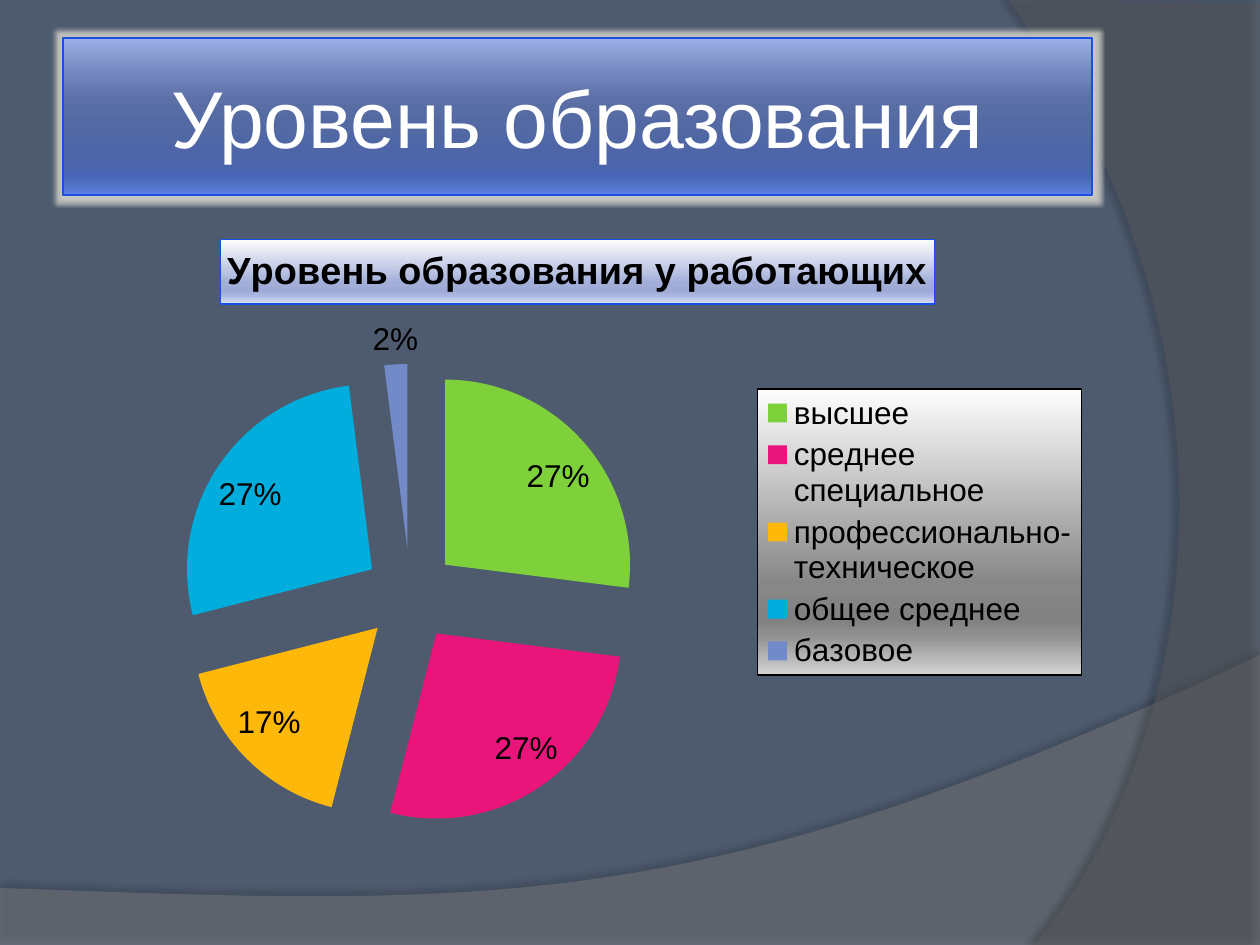
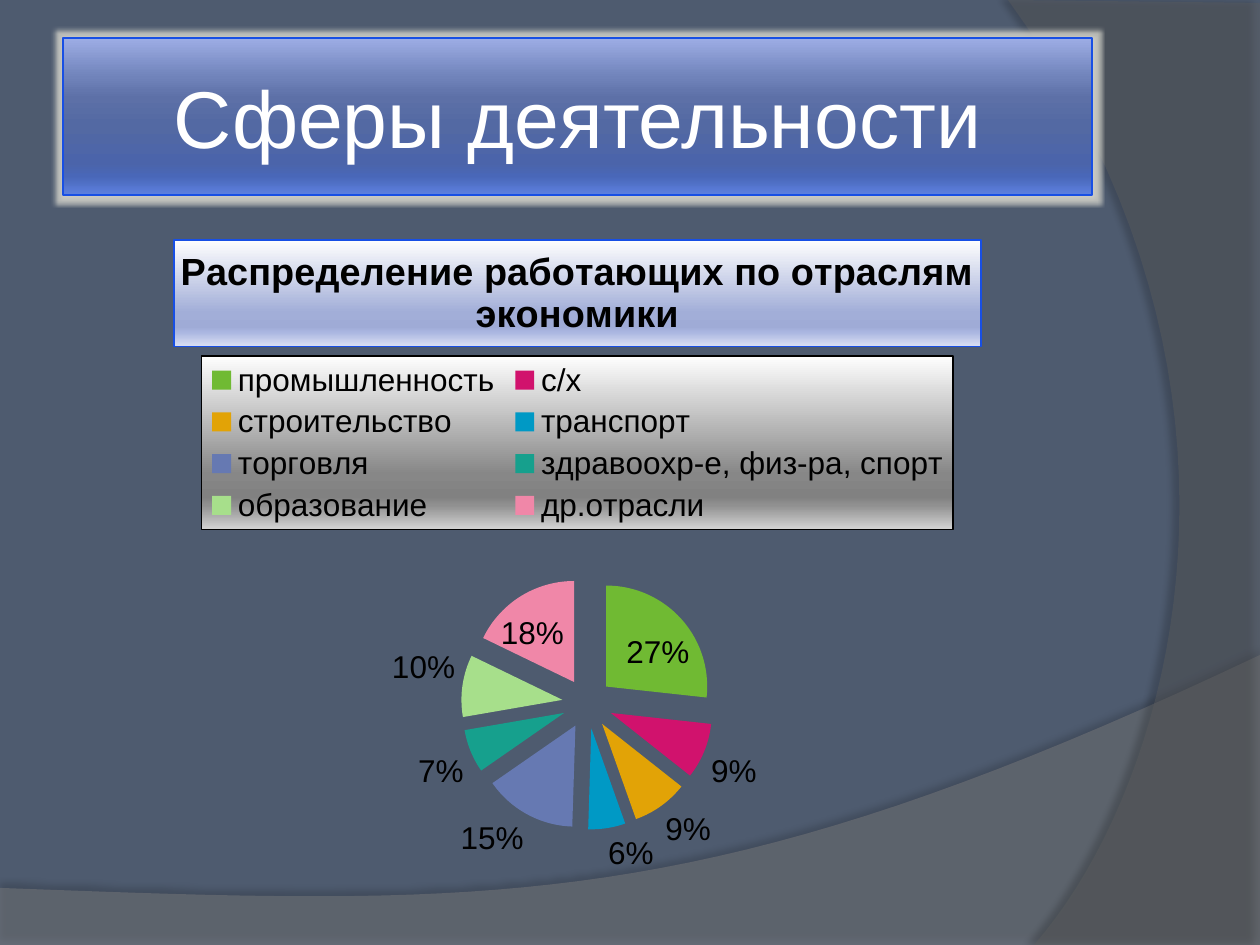
import dataclasses

import pptx
import pptx.chart.data
import pptx.dml.color
import pptx.enum.chart
import pptx.enum.shapes
import pptx.enum.text
import pptx.oxml
import pptx.oxml.ns
import pptx.util

SLIDES = [
    {
        "title": "Уровень образования",
        "chart_title": "Уровень образования у работающих",
        "legend": pptx.enum.chart.XL_LEGEND_POSITION.RIGHT,
        "chart_height": 624,
        "sectors": [
            ("высшее", 27, "7FD13B"),
            ("среднее специальное", 27, "EA157A"),
            ("профессионально-техническое", 17, "FEB80A"),
            ("общее среднее", 27, "00ADDC"),
            ("базовое", 2, "738AC8"),
        ],
    },
    {
        "title": "Сферы деятельности",
        "chart_title": "Распределение работающих по отраслям экономики",
        "legend": pptx.enum.chart.XL_LEGEND_POSITION.TOP,
        "chart_height": 669,
        "sectors": [
            ("промышленность", 27, "70BA33"),
            ("с/х", 9, "D1126D"),
            ("строительство", 9, "E2A306"),
            ("транспорт", 6, "0099C5"),
            ("торговля", 15, "6679B2"),
            ("здравоохр-е, физ-ра, спорт", 7, "16A08D"),
            ("образование", 10, "A7DF8B"),
            ("др.отрасли", 18, "F087A8"),
        ],
    },
]

WAVES = [
    {
        "curve": [(1260, 655), (704, 919), (493, 906), (0, 888)],
        "corners": [(0, 946), (1260, 946)],
        "color": "7F7F7F", "alpha": 45,
        "shadow": {"alpha": 35, "distance": 3.5, "angle": 270},
    },
    {
        "curve": [(1034, 945), (1178, 780), (1283, 378), (1008, 0)],
        "corners": [(1260, 3), (1260, 945)],
        "color": "5E5E5E", "alpha": 40,
        "shadow": {"alpha": 45, "distance": 4, "angle": 180},
    },
]


@dataclasses.dataclass(frozen=True)
class Theme:
    font: str = "Arial"
    background: str = "4E5B6F"
    light: str = "FFFFFF"
    dark: str = "000000"
    border: str = "184FE4"
    halo: str = "D0D0C8"
    title_size: float = 46
    chart_title_size: float = 21.6
    chart_size: float = 18
    line: float = 0.75
    title_stops: tuple = ((0, "9DADE5"), (25, "7083BA"), (38, "5D70A7"), (55, "5369A3"),
                          (80, "4B64AA"), (88, "4967B8"), (100, "5D80DF"))
    chart_title_stops: tuple = ((0, "FEFEFE"), (68, "A2AED8"), (81, "9FABD6"),
                                (86, "A9B5E0"), (100, "DCE1F4"))
    legend_stops: tuple = ((0, "FEFEFE"), (68, "878787"), (81, "818181"),
                           (86, "909090"), (100, "D3D3D3"))


THEME = Theme()
SLIDE_SIZE = (1260, 945)
LEFT, TITLE_TOP, CHART_TOP = 63, 38, 220
CONTENT_WIDTH, TITLE_HEIGHT = 1029, 157
TITLE_INSET, HALO_RADIUS = 6, 6
EXPLOSION = 25
CURVE_STEPS = 40
NAMESPACES = pptx.oxml.ns.nsdecls("a", "c")


def px(value):
    return pptx.util.Emu(round(value * 914400 / 126))


def rgb(color):
    return pptx.dml.color.RGBColor.from_string(color)


def style_font(font, color, size, bold=False):
    font.name = THEME.font
    font.size = pptx.util.Pt(size)
    font.bold = bold
    font.color.rgb = rgb(color)


def style_line(line, color):
    line.color.rgb = rgb(color)
    line.width = pptx.util.Pt(THEME.line)


def gradient_xml(stops):
    marks = "".join(f'<a:gs pos="{position * 1000}"><a:srgbClr val="{color}"/></a:gs>'
                    for position, color in stops)
    return (f'<a:gradFill {NAMESPACES} rotWithShape="1"><a:gsLst>{marks}</a:gsLst>'
            '<a:lin ang="5400000" scaled="0"/></a:gradFill>')


def set_gradient(fill, element, stops):
    fill.background()
    blank = element.xpath("./*[local-name()='spPr']/a:noFill")[0]
    blank.getparent().replace(blank, pptx.oxml.parse_xml(gradient_xml(stops)))


def add_effect(shape, tag, attributes, color, alpha):
    shape.shadow.inherit = False
    effects = shape.element.xpath("./p:spPr/a:effectLst")[0]
    effects.append(pptx.oxml.parse_xml(
        f'<a:{tag} {NAMESPACES} {attributes}><a:srgbClr val="{color}">'
        f'<a:alpha val="{alpha * 1000}"/></a:srgbClr></a:{tag}>'))


def curve_points(start, control_one, control_two, end):
    for step in range(CURVE_STEPS + 1):
        t = step / CURVE_STEPS
        weights = ((1 - t) ** 3, 3 * t * (1 - t) ** 2, 3 * t ** 2 * (1 - t), t ** 3)
        points = (start, control_one, control_two, end)
        yield tuple(px(sum(weight * point[axis] for weight, point in zip(weights, points)))
                    for axis in (0, 1))


def add_wave(slide, wave):
    first, *others = curve_points(*wave["curve"])
    builder = slide.shapes.build_freeform(*first)
    corners = [(px(x), px(y)) for x, y in wave["corners"]]
    builder.add_line_segments(others + corners, close=True)
    shape = builder.convert_to_shape()
    shape.fill.solid()
    shape.fill.fore_color.rgb = rgb(wave["color"])
    color = shape.element.xpath("./p:spPr/a:solidFill/a:srgbClr")[0]
    color.append(pptx.oxml.parse_xml(
        f'<a:alpha {NAMESPACES} val="{wave["alpha"] * 1000}"/>'))
    shape.line.fill.background()
    shadow = wave["shadow"]
    add_effect(shape, "outerShdw",
               f'blurRad="{pptx.util.Pt(4)}" dist="{pptx.util.Pt(shadow["distance"])}" '
               f'dir="{shadow["angle"] * 60000}" rotWithShape="0"',
               THEME.dark, shadow["alpha"])
    return shape


def decorate_master(presentation, slide):
    master = presentation.slide_master
    master.background.fill.solid()
    master.background.fill.fore_color.rgb = rgb(THEME.background)
    for number, wave in enumerate(WAVES, start=20):
        shape = add_wave(slide, wave)
        shape.element.nvSpPr.cNvPr.set("id", str(number))
        master.shapes.element.append(shape.element)


def add_title(slide, text):
    shape = slide.shapes.add_shape(
        pptx.enum.shapes.MSO_SHAPE.RECTANGLE,
        px(LEFT), px(TITLE_TOP), px(CONTENT_WIDTH), px(TITLE_HEIGHT))
    set_gradient(shape.fill, shape.element, THEME.title_stops)
    style_line(shape.line, THEME.border)
    add_effect(shape, "glow", f'rad="{px(HALO_RADIUS)}"', THEME.halo, 80)
    frame = shape.text_frame
    frame.word_wrap = True
    frame.vertical_anchor = pptx.enum.text.MSO_ANCHOR.MIDDLE
    for side in ("left", "top", "right", "bottom"):
        setattr(frame, f"margin_{side}", px(TITLE_INSET))
    paragraph = frame.paragraphs[0]
    paragraph.alignment = pptx.enum.text.PP_ALIGN.CENTER
    run = paragraph.add_run()
    run.text = text
    style_font(run.font, THEME.light, THEME.title_size)


def style_chart_title(chart, text):
    chart.has_title = True
    title = chart.chart_title
    run = title.text_frame.paragraphs[0].add_run()
    run.text = text
    style_font(run.font, THEME.dark, THEME.chart_title_size, bold=True)
    title.include_in_layout = False
    element = chart.element.xpath("./c:chart/c:title")[0]
    set_gradient(title.format.fill, element, THEME.chart_title_stops)
    style_line(title.format.line, THEME.border)


def style_legend(chart, position):
    chart.has_legend = True
    chart.legend.position = position
    chart.legend.include_in_layout = False
    style_font(chart.legend.font, THEME.dark, THEME.chart_size)
    text_properties = chart.element.xpath("./c:chart/c:legend/c:txPr")[0]
    text_properties.addprevious(pptx.oxml.parse_xml(
        f'<c:spPr {NAMESPACES}>{gradient_xml(THEME.legend_stops)}'
        f'<a:ln w="{pptx.util.Pt(THEME.line)}"><a:solidFill>'
        f'<a:srgbClr val="{THEME.dark}"/></a:solidFill></a:ln></c:spPr>'))


def style_sectors(chart, colors):
    plot = chart.plots[0]
    plot.vary_by_categories = True
    series = plot.series[0]
    for index, color in enumerate(colors):
        sector = series.points[index].format
        sector.fill.solid()
        sector.fill.fore_color.rgb = rgb(color)
        sector.line.fill.background()
    first_point = chart.element.xpath(".//c:ser/c:dPt")[0]
    first_point.addprevious(pptx.oxml.parse_xml(
        f'<c:explosion {NAMESPACES} val="{EXPLOSION}"/>'))
    labels = series.data_labels
    labels.show_value = False
    labels.show_percentage = True
    labels.number_format = "0%"
    labels.number_format_is_linked = False
    labels.position = pptx.enum.chart.XL_LABEL_POSITION.BEST_FIT
    style_font(labels.font, THEME.dark, THEME.chart_size)


def add_pie(slide, content):
    names, values, colors = zip(*content["sectors"])
    data = pptx.chart.data.CategoryChartData()
    data.categories = names
    data.add_series(content["chart_title"], values)
    chart = slide.shapes.add_chart(
        pptx.enum.chart.XL_CHART_TYPE.PIE, px(LEFT), px(CHART_TOP),
        px(CONTENT_WIDTH), px(content["chart_height"]), data).chart
    style_font(chart.font, THEME.light, THEME.chart_size)
    style_chart_title(chart, content["chart_title"])
    style_legend(chart, content["legend"])
    style_sectors(chart, colors)


def main():
    presentation = pptx.Presentation()
    presentation.slide_width, presentation.slide_height = map(px, SLIDE_SIZE)
    for index, content in enumerate(SLIDES):
        slide = presentation.slides.add_slide(presentation.slide_layouts[6])
        if index == 0:
            decorate_master(presentation, slide)
        add_title(slide, content["title"])
        add_pie(slide, content)
    presentation.save("out.pptx")


if __name__ == "__main__":
    main()
